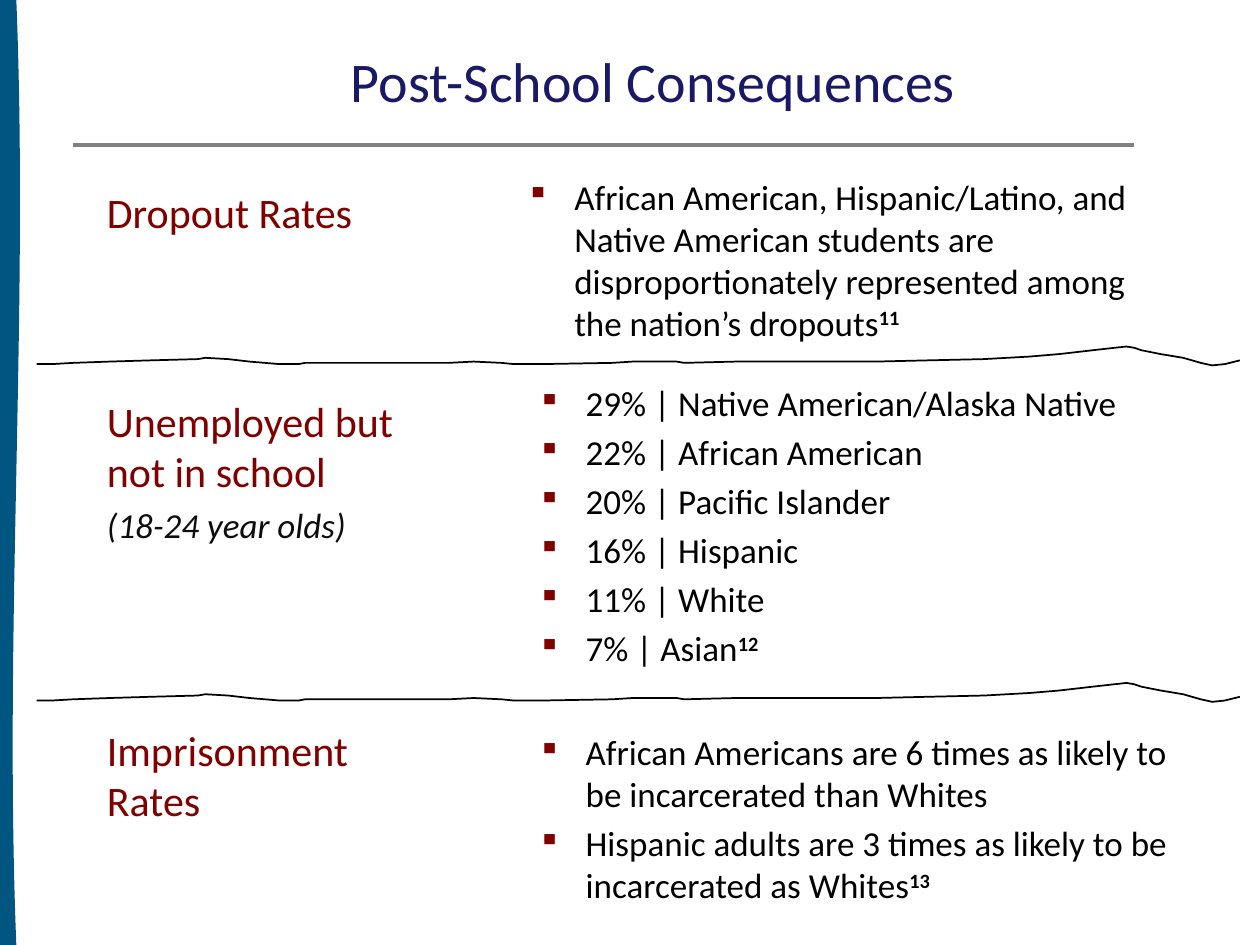
"""Builds the Post-School Consequences slide."""
from lxml import etree
from pptx import Presentation
from pptx import util as u
from pptx.dml.color import RGBColor
from pptx.enum import shapes, text
from pptx.oxml import ns

PX = 9144
MAROON, BLACK = "800000", "000000"


def paint(color, value):
    color.rgb = RGBColor.from_string(value)


def write(box, paragraphs, bulleted=False, align=text.PP_ALIGN.LEFT, anchor=text.MSO_ANCHOR.TOP):
    frame = slide.shapes.add_textbox(*(n * PX for n in box)).text_frame
    frame.word_wrap = True
    frame.vertical_anchor = anchor
    for index, (words, note, size, color, italic) in enumerate(paragraphs):
        paragraph = frame.paragraphs[0] if index == 0 else frame.add_paragraph()
        paragraph.alignment = align
        paragraph.space_before = u.Pt(size * 0.2)
        if bulleted:
            props = paragraph._p.get_or_add_pPr()
            props.set("marL", str(38 * PX))
            props.set("indent", str(-38 * PX))
            tint = etree.SubElement(props, ns.qn("a:buClr"))
            etree.SubElement(tint, ns.qn("a:srgbClr"), val=MAROON)
            etree.SubElement(props, ns.qn("a:buSzPct"), val="90000")
            etree.SubElement(props, ns.qn("a:buChar"), char="▪")
        for wording, raised in ((words, False), (note, True)):
            if not wording:
                continue
            run = paragraph.add_run()
            run.text = wording
            look = {"name": "Calibri", "size": u.Pt(size), "bold": raised, "italic": italic}
            for key, value in look.items():
                setattr(run.font, key, value)
            paint(run.font.color, color)
            if raised:
                run._r.get_or_add_rPr().set("baseline", "30000")


deck = Presentation()
deck.slide_width, deck.slide_height = 1000 * PX, 750 * PX
slide = deck.slides.add_slide(deck.slide_layouts[6])

write((256, 22, 525, 83), [("Post-School Consequences", "", 32, "191966", False)],
      align=text.PP_ALIGN.CENTER, anchor=text.MSO_ANCHOR.MIDDLE)

headings = [
    (143, ["Dropout Rates"], []),
    (309, ["Unemployed but not in school"], ["(18-24 year olds)"]),
    (570, ["Imprisonment Rates"], []),
]
for top, titles, ages in headings:
    write((75, top, 258, 100), [(title, "", 24, MAROON, False) for title in titles]
          + [(age, "", 20, "0D0D0D", True) for age in ages])

findings = [
    ((408, 134, 500, 100), [
        ("African American, Hispanic/Latino, and Native American students are "
         "disproportionately represented among the nation’s dropouts", "11")]),
    ((417, 298, 525, 100), [
        ("29% | Native American/Alaska Native", ""),
        ("22% | African American", ""),
        ("20% | Pacific Islander", ""),
        ("16% | Hispanic", ""),
        ("11% | White", ""),
        ("7% | Asian", "12")]),
    ((417, 575, 533, 100), [
        ("African Americans are 6 times as likely to be incarcerated than Whites", ""),
        ("Hispanic adults are 3 times as likely to be incarcerated as Whites", "13")]),
]
for box, facts in findings:
    write(box, [(fact, note, 20, BLACK, False) for fact, note in facts], bulleted=True)

ripple = [
    (29, 14), (41, 14), (58, 13), (87, 12), (120, 11), (157, 10), (163, 9), (181, 10),
    (198, 12), (222, 14), (237, 14), (242, 13), (356, 13), (376, 12), (398, 13), (408, 14),
    (429, 14), (486, 13), (502, 12), (537, 12), (543, 13), (584, 12), (695, 12), (737, 11),
    (781, 10), (817, 8), (841, 6), (867, 3), (885, 1), (894, 0), (900, 1), (906, 3),
    (921, 6), (939, 9), (946, 11), (953, 13), (962, 15), (972, 14), (984, 11),
]
for top in (275, 542):
    points = [(x, top + y) for x, y in ripple]
    builder = slide.shapes.build_freeform(*points[0], scale=PX)
    builder.add_line_segments(points[1:], close=False)
    divider = builder.convert_to_shape()
    divider.shadow.inherit = False
    divider.fill.background()
    divider.line.width = u.Pt(1)
    paint(divider.line.color, BLACK)

rule = slide.shapes.add_connector(shapes.MSO_CONNECTOR.STRAIGHT, 58 * PX, 115 * PX, 900 * PX, 115 * PX)
rule.line.width = u.Pt(2.25)
paint(rule.line.color, "808080")
etree.SubElement(rule._element.spPr, ns.qn("a:effectLst"))

edge = slide.shapes.add_shape(shapes.MSO_SHAPE.WAVE, -371 * PX, 363 * PX, 750 * PX, 24 * PX)
edge.rotation = 270
edge.shadow.inherit = False
edge.fill.solid()
paint(edge.fill.fore_color, "005680")
edge.line.fill.background()

deck.save("out.pptx")
